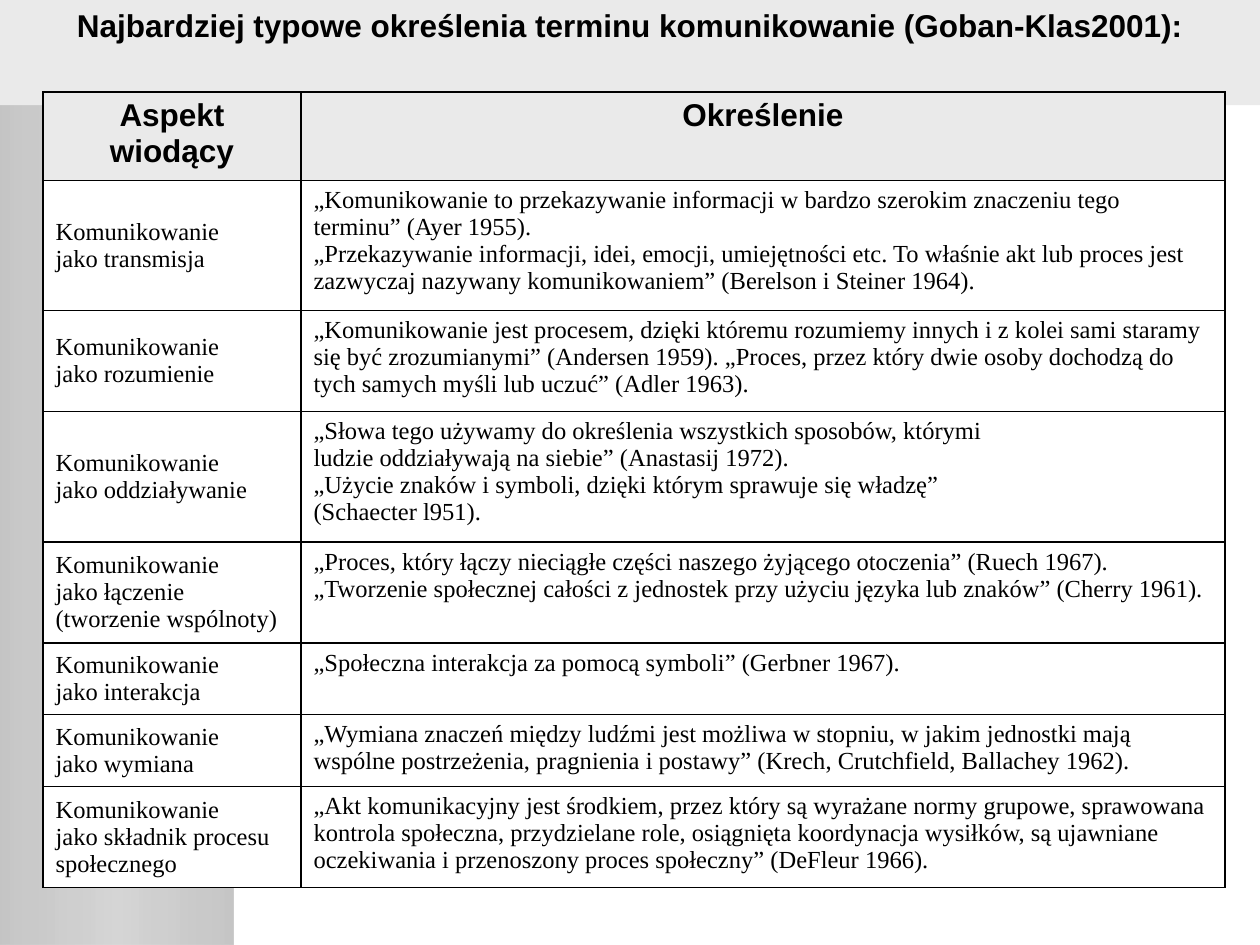
from copy import deepcopy
from lxml.etree import SubElement
from pptx import Presentation
from pptx.dml.color import RGBColor
from pptx.enum.shapes import MSO_SHAPE as Shape
from pptx.enum.text import MSO_ANCHOR as Anchor, MSO_AUTO_SIZE as AutoSize, PP_ALIGN as Align
from pptx.oxml import parse_xml
from pptx.oxml.ns import nsdecls, qn
from pptx.util import Emu, Pt

PX = 914400 / 126
TITLE = "Najbardziej typowe określenia terminu komunikowanie (Goban-Klas2001):"
HEADERS = ["Aspekt wiodący", "Określenie"]
COLUMN_WIDTHS = [258, 924]
ROW_HEIGHTS = [88, 130, 101, 130, 101, 71, 72, 101]
DEFINITIONS = [
    (["Komunikowanie \njako transmisja"],
     ["„Komunikowanie to przekazywanie informacji w bardzo szerokim znaczeniu tego terminu” (Ayer 1955).",
      "„Przekazywanie informacji, idei, emocji, umiejętności etc. To właśnie akt lub proces jest "
      "zazwyczaj nazywany komunikowaniem” (Berelson i Steiner 1964)."]),
    (["Komunikowanie \njako rozumienie"],
     ["„Komunikowanie jest procesem, dzięki któremu rozumiemy innych i z kolei sami staramy się być "
      "zrozumianymi” (Andersen 1959). „Proces, przez który dwie osoby dochodzą do tych samych myśli "
      "lub uczuć” (Adler 1963)."]),
    (["Komunikowanie", "jako oddziaływanie"],
     ["„Słowa tego używamy do określenia wszystkich sposobów, którymi",
      "ludzie oddziaływają na siebie” (Anastasij 1972).",
      "„Użycie znaków i symboli, dzięki którym sprawuje się władzę”",
      "(Schaecter l951)."]),
    (["Komunikowanie \njako łączenie \n(tworzenie wspólnoty)"],
     ["„Proces, który łączy nieciągłe części naszego żyjącego otoczenia” (Ruech 1967).",
      "„Tworzenie społecznej całości z jednostek przy użyciu języka lub znaków” (Cherry 1961)."]),
    (["Komunikowanie \njako interakcja"],
     ["„Społeczna interakcja za pomocą symboli” (Gerbner 1967)."]),
    (["Komunikowanie \njako wymiana"],
     ["„Wymiana znaczeń między ludźmi jest możliwa w stopniu, w jakim jednostki mają wspólne "
      "postrzeżenia, pragnienia i postawy” (Krech, Crutchfield, Ballachey 1962)."]),
    (["Komunikowanie \njako składnik procesu społecznego"],
     ["„Akt komunikacyjny jest środkiem, przez który są wyrażane normy grupowe, sprawowana kontrola "
      "społeczna, przydzielane role, osiągnięta koordynacja wysiłków, są ujawniane oczekiwania i "
      "przenoszony proces społeczny” (DeFleur 1966)."]),
]


def px(length):
    return Emu(round(length * PX))


def paint(fill, color):
    fill.solid()
    fill.fore_color.rgb = RGBColor.from_string(color)


def write(frame, lines, size=14, font="Times New Roman", bold=False, align=Align.LEFT, color="000000"):
    for index, line in enumerate(lines):
        para = frame.add_paragraph() if index else frame.paragraphs[0]
        para.text = line
        para.alignment = align
        for span in para.runs:
            span.font.size = Pt(size)
            span.font.name = font
            span.font.bold = bold
            paint(span.font.fill, color)
        for line_break in para._p.findall(qn("a:br")):
            line_break.append(deepcopy(para.runs[0]._r.rPr))


def write_heading(frame, text):
    write(frame, [text], size=18, font="Arial", bold=True, align=Align.CENTER)


def add_side_panel(page):
    panel = page.shapes.add_shape(Shape.RECTANGLE, 0, 0, px(234), px(945))
    panel.shadow.inherit = False
    panel.line.fill.background()
    stops = "".join(
        f'<a:gs pos="{place * 1000}"><a:srgbClr val="{color}"><a:alpha val="54000"/></a:srgbClr></a:gs>'
        for place, color in [(0, "969696"), (50, "B3B3B3"), (100, "969696")])
    gradient = parse_xml(f'<a:gradFill {nsdecls("a")} rotWithShape="1"><a:gsLst>{stops}</a:gsLst>'
                         '<a:lin ang="0" scaled="1"/></a:gradFill>')
    panel._element.spPr.find(qn("a:prstGeom")).addnext(gradient)
    page.shapes._spTree.insert(2, panel._element)


def add_title(page):
    title = page.shapes.title
    title.left, title.top, title.width, title.height = px(0), px(0), px(1260), px(50)
    paint(title.fill, "EAEAEA")
    frame = title.text_frame
    frame.word_wrap = True
    frame.auto_size = AutoSize.SHAPE_TO_FIT_TEXT
    frame.vertical_anchor = Anchor.TOP
    write_heading(frame, TITLE)


def add_borders(cell, color="000000", width=1):
    properties = cell._tc.get_or_add_tcPr()
    for index, side in enumerate(["lnL", "lnR", "lnT", "lnB"]):
        line = SubElement(properties, qn(f"a:{side}"), w=str(Pt(width)))
        SubElement(SubElement(line, qn("a:solidFill")), qn("a:srgbClr"), val=color)
        properties.insert(index, line)


def add_definitions(page):
    table = page.shapes.add_table(len(ROW_HEIGHTS), len(COLUMN_WIDTHS), px(43), px(92),
                                  px(sum(COLUMN_WIDTHS)), px(sum(ROW_HEIGHTS))).table
    table.first_row = table.horz_banding = False
    for column, width in zip(table.columns, COLUMN_WIDTHS):
        column.width = px(width)
    for row, height in zip(table.rows, ROW_HEIGHTS):
        row.height = px(height)
    for cell, header in zip(table.rows[0].cells, HEADERS):
        write_heading(cell.text_frame, header)
        paint(cell.fill, "EAEAEA")
    for index, (aspect, quotes) in enumerate(DEFINITIONS, start=1):
        aspect_cell, quote_cell = table.rows[index].cells
        aspect_cell.vertical_anchor = Anchor.MIDDLE
        for cell, lines in [(aspect_cell, aspect), (quote_cell, quotes)]:
            write(cell.text_frame, lines)
            paint(cell.fill, "FFFFFF")
    for cell in table.iter_cells():
        add_borders(cell)


def main():
    deck = Presentation()
    deck.slide_width, deck.slide_height = px(1260), px(945)
    page = deck.slides.add_slide(deck.slide_layouts[5])
    paint(page.background.fill, "FFFFFF")
    add_side_panel(page)
    add_title(page)
    add_definitions(page)
    deck.save("out.pptx")


if __name__ == "__main__":
    main()
